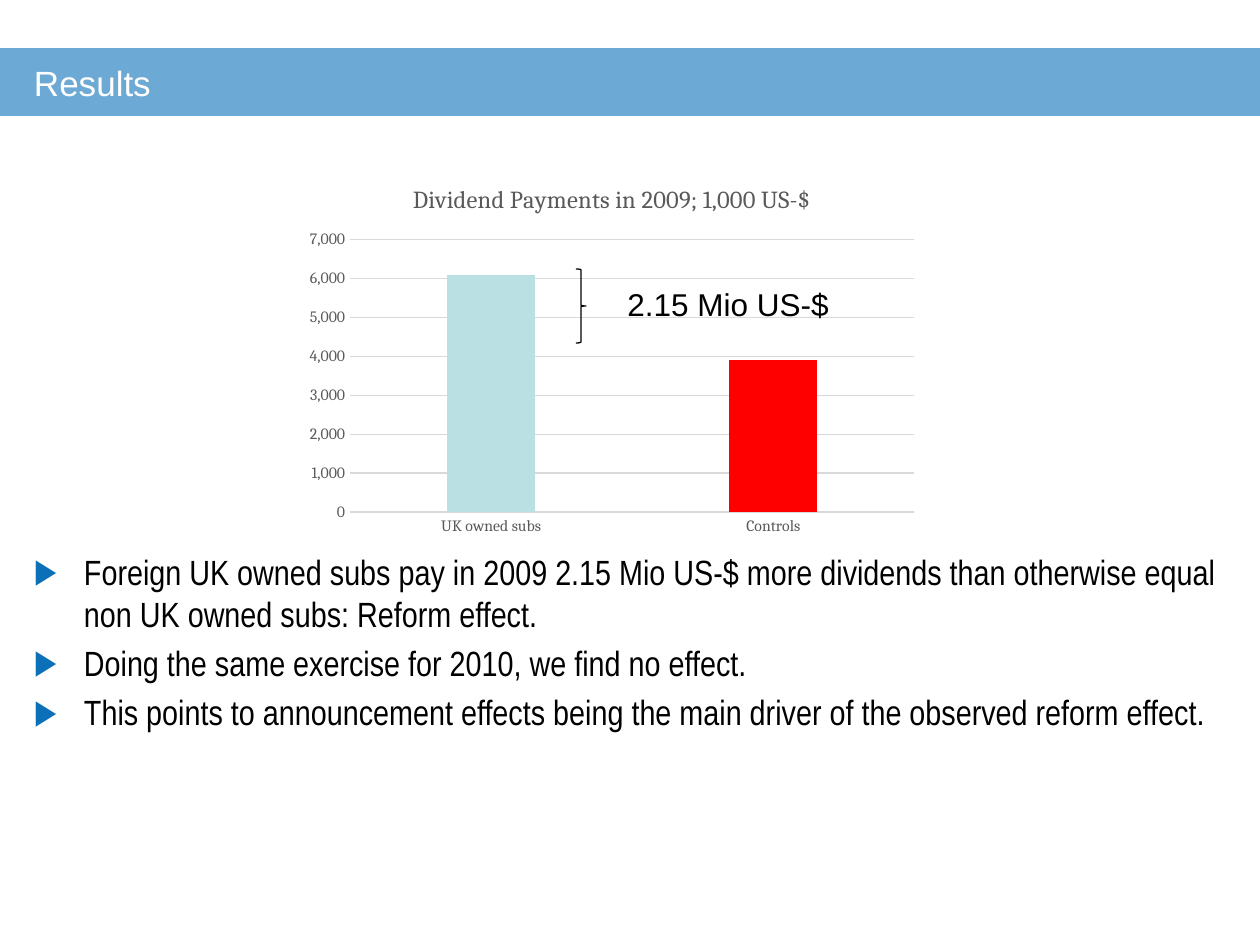
import dataclasses

import pptx
import pptx.chart.data
import pptx.dml.color
import pptx.enum.chart
import pptx.enum.shapes
import pptx.enum.text
import pptx.oxml.ns
import pptx.util
from lxml import etree

TITLE = "Results"
BULLETS = [
    "Foreign UK owned subs pay in 2009 2.15 Mio US-$ more dividends than "
    "otherwise equal non UK owned subs: Reform effect.",
    "Doing the same exercise for 2010, we find no effect.",
    "This points to announcement effects being the main driver of the "
    "observed reform effect.",
]
CHART_TITLE = "Dividend Payments in 2009; 1,000 US-$"
DIVIDENDS = {"UK owned subs": 6100, "Controls": 3900}
DIFFERENCE = "2.15 Mio US-$"

# left, top, width, height in px
SLIDE_W, SLIDE_H = 1260, 945
BAND = (0, 48, SLIDE_W, 68)
HEADING = (34, 48, 1191, 68)
CHART = (297, 165, 630, 378)
BRACE = (576, 269, 10, 74)
LABEL = (615, 279, 253, 50)
BODY = (34, 551, 1191, 190)
INDENT = 50


@dataclasses.dataclass(frozen=True)
class Theme:
    band: str = "0B70B8"
    band_alpha: int = 60
    white: str = "FFFFFF"
    black: str = "000000"
    grey: str = "595959"
    grid: str = "D9D9D9"
    bars: tuple = ("BBE0E3", "FF0000")
    sans: str = "Arial"
    narrow: str = "Arial Narrow"
    serif: str = "Cambria"
    text: int = 20
    label: int = 18
    chart_title: int = 14
    axis: int = 9
    line: float = 0.75


T = Theme()


def px(n):
    return pptx.util.Emu(round(n * 914400 / 126))


def box(rect):
    return [px(n) for n in rect]


def rgb(color):
    return pptx.dml.color.RGBColor.from_string(color)


def set_font(font, name, size, color):
    font.name = name
    font.size = pptx.util.Pt(size)
    font.bold = False
    font.color.rgb = rgb(color)


def set_line(line, color):
    line.color.rgb = rgb(color)
    line.width = pptx.util.Pt(T.line)


def add_child(parent, tag, **attrs):
    return etree.SubElement(parent, pptx.oxml.ns.qn(tag), attrs)


def add_run(p, text, name, size, color):
    r = p.add_run()
    r.text = text
    set_font(r.font, name, size, color)


def add_text_frame(s, rect, inset=0, wrap=True):
    tf = s.shapes.add_textbox(*box(rect)).text_frame
    tf.word_wrap = wrap
    tf.margin_left = tf.margin_right = px(inset)
    tf.margin_top = tf.margin_bottom = px(inset / 2)
    return tf


def add_heading(s):
    sp = s.shapes.add_shape(pptx.enum.shapes.MSO_SHAPE.RECTANGLE, *box(BAND))
    sp.shadow.inherit = False
    sp.line.fill.background()
    sp.fill.solid()
    sp.fill.fore_color.rgb = rgb(T.band)
    color = next(sp.element.spPr.iter(pptx.oxml.ns.qn("a:srgbClr")))
    add_child(color, "a:alpha", val=str(T.band_alpha * 1000))

    tf = add_text_frame(s, HEADING)
    tf.vertical_anchor = pptx.enum.text.MSO_ANCHOR.MIDDLE
    add_run(tf.paragraphs[0], TITLE, T.sans, T.text, T.white)


def add_bullets(s):
    tf = add_text_frame(s, BODY)
    for i, text in enumerate(BULLETS):
        p = tf.paragraphs[0] if i == 0 else tf.add_paragraph()
        if i:
            p.space_before = pptx.util.Pt(T.text * 0.2)
        pPr = p._p.get_or_add_pPr()
        pPr.set("marL", str(px(INDENT)))
        pPr.set("indent", str(-px(INDENT)))
        add_child(add_child(pPr, "a:buClr"), "a:srgbClr", val=T.band)
        add_child(pPr, "a:buFont", typeface=T.sans)
        add_child(pPr, "a:buChar", char="▶")
        add_run(p, text, T.narrow, T.text, T.black)


def add_dividend_chart(s):
    data = pptx.chart.data.CategoryChartData(number_format="#,##0")
    data.categories = list(DIVIDENDS)
    data.add_series("Series 1", list(DIVIDENDS.values()))
    chart = s.shapes.add_chart(
        pptx.enum.chart.XL_CHART_TYPE.COLUMN_CLUSTERED, *box(CHART), data
    ).chart
    chart.has_legend = False
    chart.font.name = T.serif
    p = chart.chart_title.text_frame.paragraphs[0]
    add_run(p, CHART_TITLE, T.serif, T.chart_title, T.grey)

    plot = chart.plots[0]
    plot.vary_by_categories = False
    plot.gap_width = 219
    plot.overlap = -27
    for i, color in enumerate(T.bars):
        fill = plot.series[0].points[i].format.fill
        fill.solid()
        fill.fore_color.rgb = rgb(color)

    for axis in (chart.category_axis, chart.value_axis):
        axis.major_tick_mark = pptx.enum.chart.XL_TICK_MARK.NONE
        axis.minor_tick_mark = pptx.enum.chart.XL_TICK_MARK.NONE
        set_font(axis.tick_labels.font, T.serif, T.axis, T.grey)
    set_line(chart.category_axis.format.line, T.grid)
    values = chart.value_axis
    values.minimum_scale, values.maximum_scale = 0, 7000
    values.major_unit = 1000
    values.tick_labels.number_format = "#,##0"
    values.tick_labels.number_format_is_linked = False
    values.format.line.fill.background()
    set_line(values.major_gridlines.format.line, T.grid)


def add_difference(s):
    sp = s.shapes.add_shape(pptx.enum.shapes.MSO_SHAPE.RIGHT_BRACE, *box(BRACE))
    sp.shadow.inherit = False
    sp.fill.background()
    set_line(sp.line, T.black)
    tf = add_text_frame(s, LABEL, inset=12.6, wrap=False)
    add_run(tf.paragraphs[0], DIFFERENCE, T.sans, T.label, T.black)


def main():
    prs = pptx.Presentation()
    prs.slide_width, prs.slide_height = px(SLIDE_W), px(SLIDE_H)
    s = prs.slides.add_slide(prs.slide_layouts[6])
    add_heading(s)
    add_bullets(s)
    add_dividend_chart(s)
    add_difference(s)
    prs.save("out.pptx")


if __name__ == "__main__":
    main()
